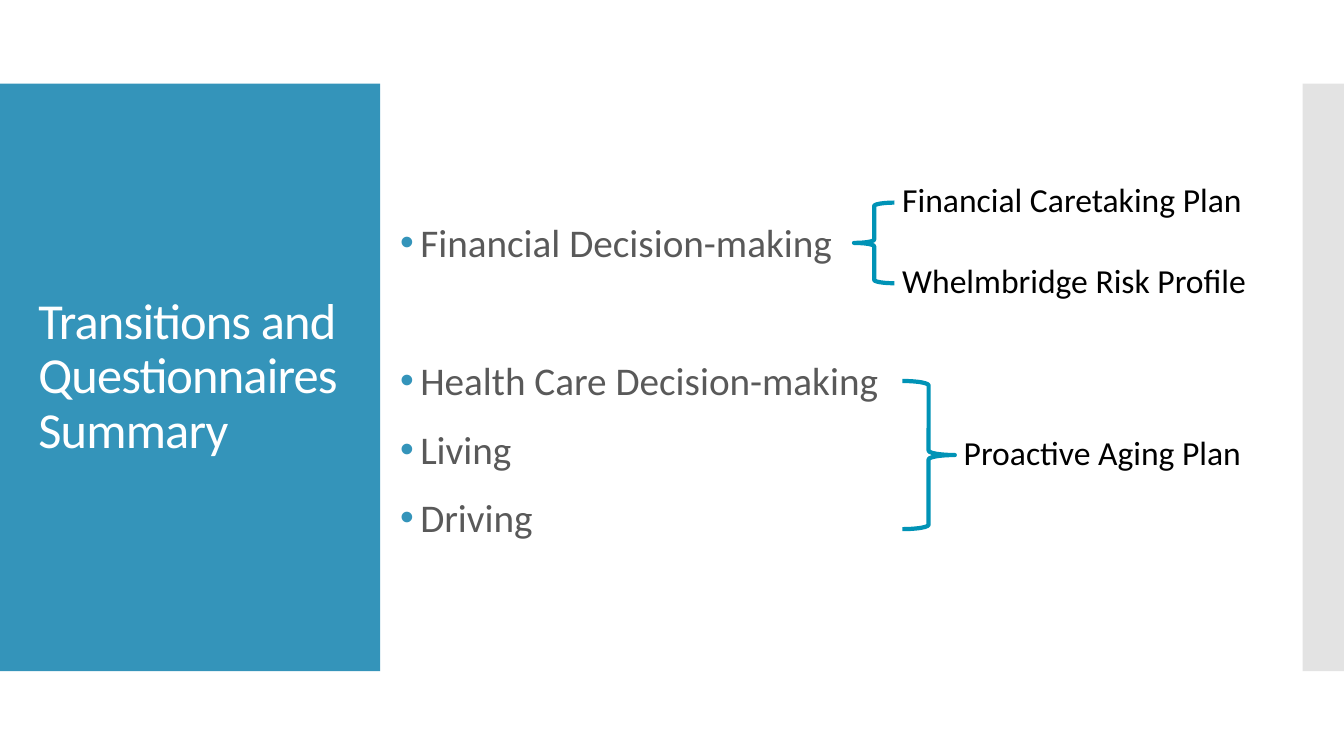
from dataclasses import dataclass

from lxml.etree import SubElement
from pptx import Presentation
from pptx.dml.color import RGBColor
from pptx.enum.shapes import MSO_SHAPE as Geo
from pptx.enum.text import MSO_ANCHOR as Anchor, MSO_AUTO_SIZE as Fit, PP_ALIGN as Align
from pptx.oxml.ns import qn
from pptx.shapes.autoshape import Shape
from pptx.slide import Slide
from pptx.text.text import TextFrame
from pptx.util import Emu, Pt

SCALE = 9144
FONT = "Calibri"
COLORS = {
    "panel": "3494BA",
    "strip": "C8C8C8",
    "title": "FFFFFF",
    "topic": "595959",
    "label": "000000",
    "brace": "0093B6",
}


@dataclass(frozen=True)
class Box:
    left: int
    top: int
    width: int
    height: int

    def emu(self) -> tuple[Emu, ...]:
        sides = (self.left, self.top, self.width, self.height)
        return tuple(Emu(side * SCALE) for side in sides)


@dataclass(frozen=True)
class Panel:
    box: Box
    color: str
    alpha: int = 100


@dataclass(frozen=True)
class Brace:
    box: Box
    turn: int = 0


@dataclass(frozen=True)
class Label:
    box: Box
    text: str


@dataclass(frozen=True)
class Topic:
    text: str
    before: int = 12


TITLE = Box(28, 123, 330, 503)
BODY = Box(387, 94, 519, 560)
PANELS = [
    Panel(Box(0, 83, 377, 583), "panel"),
    Panel(Box(1292, 83, 41, 583), "strip", 50),
]
TOPICS = [
    Topic("Financial Decision-making"),
    Topic("Health Care Decision-making", 62),
    Topic("Living"),
    Topic("Driving"),
]
BRACES = [
    Brace(Box(895, 378, 52, 147)),
    Brace(Box(847, 201, 40, 80), 180),
]
LABELS = [
    Label(Box(946, 424, 308, 50), "Proactive Aging Plan"),
    Label(Box(885, 173, 370, 50), "Financial Caretaking Plan"),
    Label(Box(885, 253, 361, 50), "Whelmbridge Risk Profile"),
]


def tint(name: str) -> RGBColor:
    return RGBColor.from_string(COLORS[name])


def style(para, size: int, color: str) -> None:
    para.alignment = Align.LEFT
    para.font.name = FONT
    para.font.size = Pt(size)
    para.font.color.rgb = tint(color)


def place(shape: Shape, box: Box) -> None:
    shape.left, shape.top, shape.width, shape.height = box.emu()


def add_panel(slide: Slide, panel: Panel) -> None:
    shape = slide.shapes.add_shape(Geo.RECTANGLE, *panel.box.emu())
    shape.shadow.inherit = False
    shape.line.fill.background()
    shape.fill.solid()
    shape.fill.fore_color.rgb = tint(panel.color)
    if panel.alpha < 100:
        color = shape.fill._xPr.find(qn("a:solidFill"))[0]
        SubElement(color, qn("a:alpha"), val=str(panel.alpha * 1000))


def add_title(slide: Slide) -> None:
    title = slide.shapes.title
    slide.shapes._spTree.append(title._element)
    place(title, TITLE)
    frame = title.text_frame
    frame.text = "Transitions and Questionnaires Summary"
    frame.word_wrap = True
    frame.auto_size = Fit.NONE
    frame.vertical_anchor = Anchor.MIDDLE
    para = frame.paragraphs[0]
    para.line_spacing = 0.9
    style(para, 36, "title")
    para.font._element.set("spc", "-60")


def add_bullet(para) -> None:
    props = para._p.get_or_add_pPr()
    props.set("marL", str(20 * SCALE))
    props.set("indent", str(-20 * SCALE))
    color = SubElement(props, qn("a:buClr"))
    SubElement(color, qn("a:srgbClr"), val=COLORS["panel"])
    SubElement(props, qn("a:buFont"), typeface="Arial")
    SubElement(props, qn("a:buChar"), char="•")


def add_text(slide: Slide, box: Box) -> TextFrame:
    return slide.shapes.add_textbox(*box.emu()).text_frame


def add_topics(slide: Slide) -> None:
    frame = add_text(slide, BODY)
    frame.word_wrap = True
    frame.vertical_anchor = Anchor.MIDDLE
    for rank, topic in enumerate(TOPICS):
        para = frame.add_paragraph() if rank else frame.paragraphs[0]
        para.text = topic.text
        para.line_spacing = 1.1
        para.space_before = Pt(topic.before)
        add_bullet(para)
        style(para, 28, "topic")


def add_brace(slide: Slide, brace: Brace) -> None:
    shape = slide.shapes.add_shape(Geo.RIGHT_BRACE, *brace.box.emu())
    shape.shadow.inherit = False
    shape.rotation = brace.turn
    shape.fill.background()
    shape.line.color.rgb = tint("brace")
    shape.line.width = Pt(3)


def add_label(slide: Slide, label: Label) -> None:
    frame = add_text(slide, label.box)
    frame.word_wrap = False
    frame.auto_size = Fit.SHAPE_TO_FIT_TEXT
    frame.text = label.text
    style(frame.paragraphs[0], 24, "label")


def main() -> None:
    deck = Presentation()
    deck.slide_width, deck.slide_height = Emu(1333 * SCALE), Emu(750 * SCALE)
    slide = deck.slides.add_slide(deck.slide_layouts[5])
    for panel in PANELS:
        add_panel(slide, panel)
    add_title(slide)
    add_topics(slide)
    for brace in BRACES:
        add_brace(slide, brace)
    for label in LABELS:
        add_label(slide, label)
    deck.save("out.pptx")


if __name__ == "__main__":
    main()
